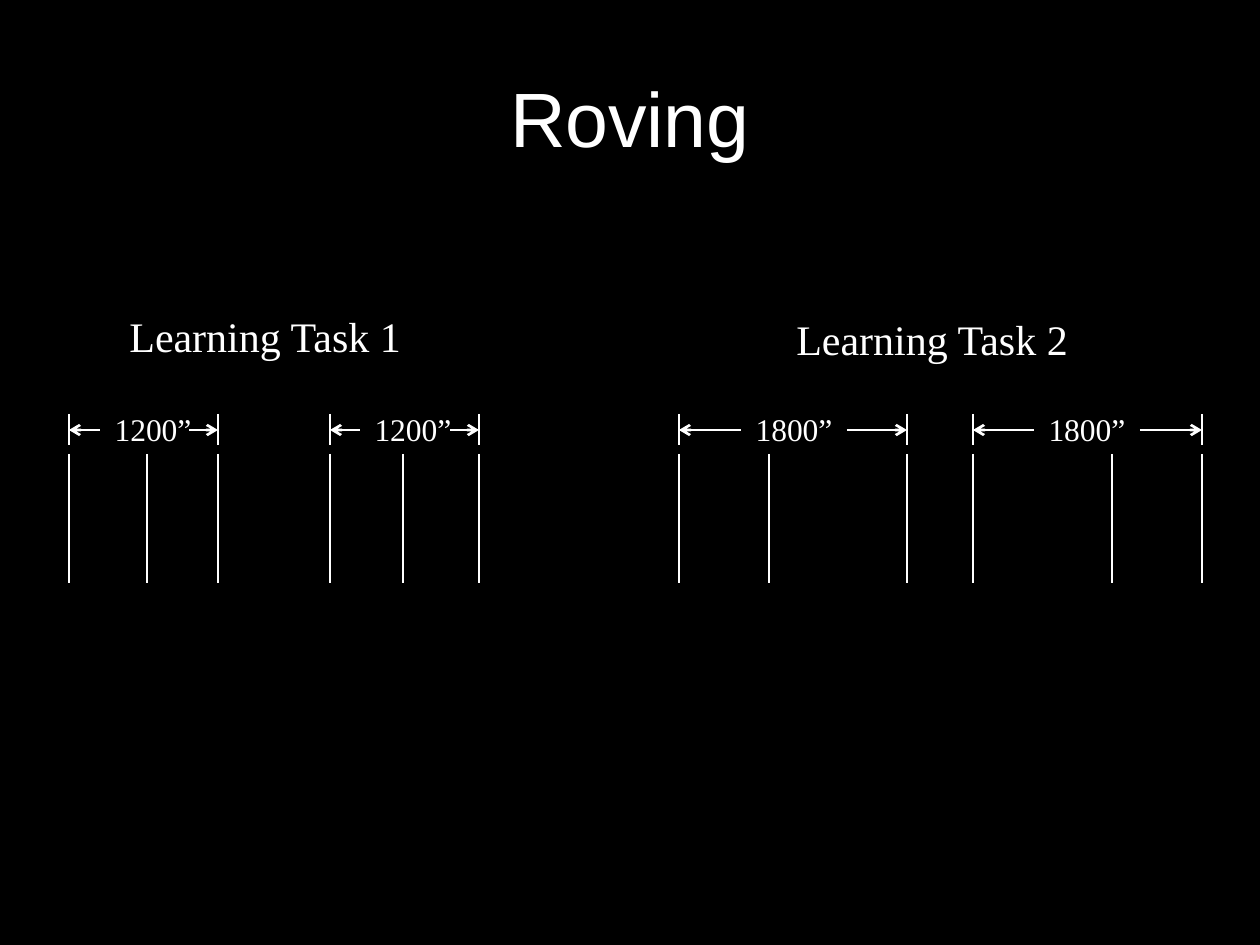
from pptx import Presentation
from pptx.dml.color import RGBColor
from pptx.enum.shapes import MSO_CONNECTOR
from pptx.enum.text import MSO_ANCHOR, MSO_AUTO_SIZE, PP_ALIGN
from pptx.oxml.ns import qn
from pptx.util import Emu, Inches, Pt
from lxml.etree import SubElement

PX = Inches(1) / 126
COLORS = {"background": "000000", "ink": "FFFFFF"}
INK = RGBColor.from_string(COLORS["ink"])

prs = Presentation()
prs.slide_width, prs.slide_height = Inches(10), Inches(7.5)
s = prs.slides.add_slide(prs.slide_layouts[6])
s.background.fill.solid()
s.background.fill.fore_color.rgb = RGBColor.from_string(COLORS["background"])


def add_text(text, box, size, font="Times New Roman", align=PP_ALIGN.CENTER):
    sp = s.shapes.add_textbox(*[Emu(round(v * PX)) for v in box])
    tf = sp.text_frame
    tf.word_wrap = True
    p = tf.paragraphs[0]
    p.alignment = align
    r = p.add_run()
    r.text = text
    r.font.name, r.font.size, r.font.color.rgb = font, Pt(size), INK
    return tf


def add_line(x1, y1, x2, y2, arrow=False):
    """Draw a line, with an open arrowhead at its end if asked."""
    ends = [Emu(round(v * PX)) for v in (x1, y1, x2, y2)]
    sp = s.shapes.add_connector(MSO_CONNECTOR.STRAIGHT, *ends)
    sp.line.color.rgb = INK
    sp.line.width = Pt(1.5)
    if arrow:
        SubElement(sp.line._get_or_add_ln(), qn("a:tailEnd"), type="arrow")
    SubElement(sp._element.spPr, qn("a:effectLst"))


title = add_text("Roving", (63, 38, 1134, 157), 44, "Arial")
title.vertical_anchor = MSO_ANCHOR.MIDDLE

# Each stimulus: label, x of its three bars, x where the two arrows start
stimuli = [
    ("1200”", (69, 147, 218), (100, 189)),
    ("1200”", (330, 403, 479), (360, 450)),
    ("1800”", (679, 769, 907), (741, 847)),
    ("1800”", (973, 1112, 1202), (1034, 1140)),
]
for label, bars, starts in stimuli:
    for x in bars:
        add_line(x, 454, x, 583)
    for start, end in zip(starts, (bars[0], bars[-1])):
        add_line(end, 414, end, 445)
        add_line(start, 430, end, 430, arrow=True)
    tf = add_text(label, (starts[0], 404, 106, 50), 18)
    tf.auto_size = MSO_AUTO_SIZE.SHAPE_TO_FIT_TEXT

for task, x, y in [("Learning Task 1", 117, 304), ("Learning Task 2", 784, 307)]:
    tf = add_text(task, (x, y, 314, 63), 24, align=PP_ALIGN.LEFT)
    tf.auto_size = MSO_AUTO_SIZE.SHAPE_TO_FIT_TEXT

prs.save("out.pptx")
